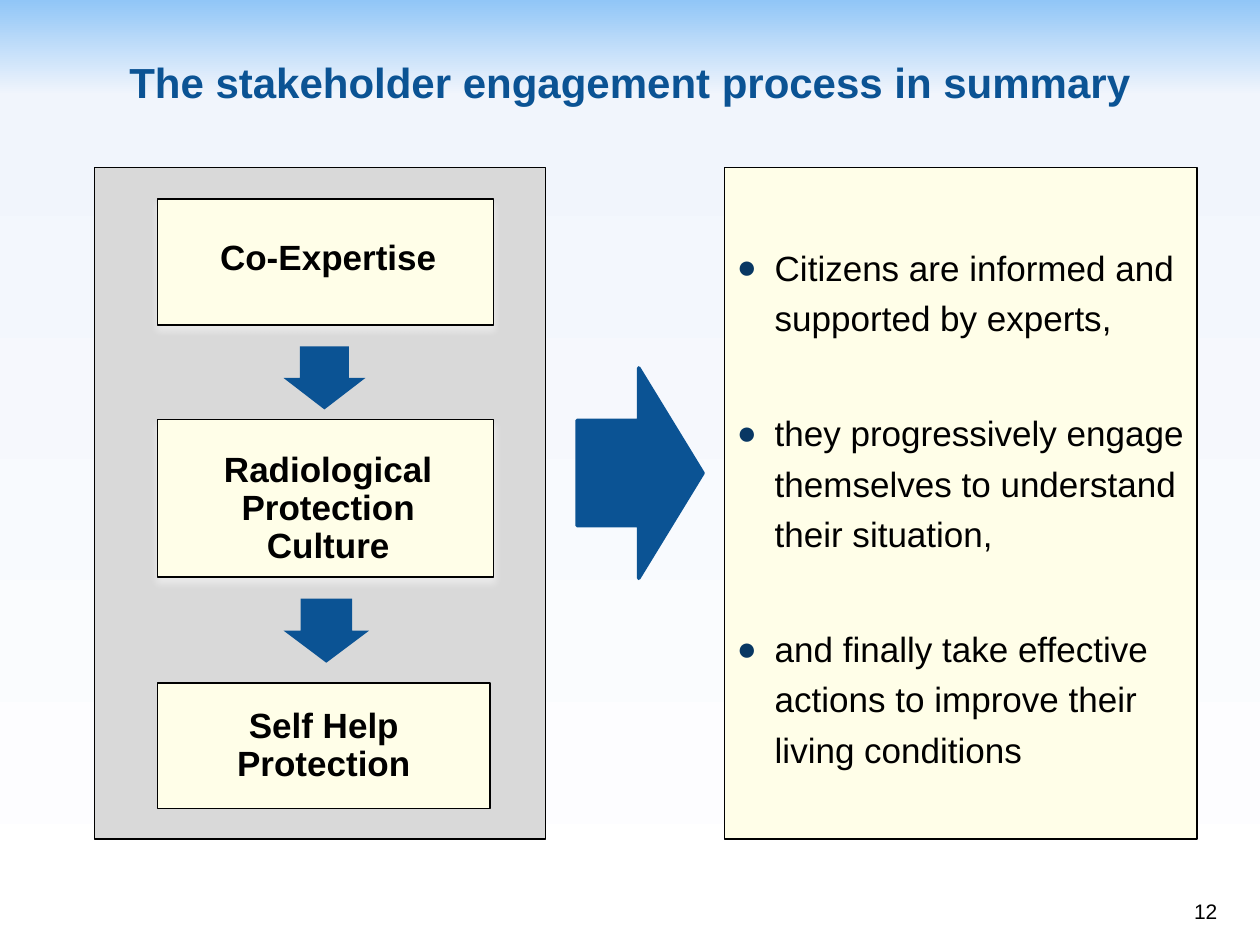
"""Build the slide that sums up the stakeholder engagement process."""
from dataclasses import dataclass

from lxml import etree
from pptx import Presentation
from pptx.dml.color import RGBColor
from pptx.enum.shapes import MSO_SHAPE
from pptx.enum.text import MSO_ANCHOR, PP_ALIGN
from pptx.oxml.ns import qn
from pptx.util import Inches, Pt

RECTANGLE = MSO_SHAPE.RECTANGLE
RIGHT_ARROW, DOWN_ARROW = MSO_SHAPE.RIGHT_ARROW, MSO_SHAPE.DOWN_ARROW
MIDDLE, BOTTOM = MSO_ANCHOR.MIDDLE, MSO_ANCHOR.BOTTOM
LEFT, CENTER, RIGHT = PP_ALIGN.LEFT, PP_ALIGN.CENTER, PP_ALIGN.RIGHT

BLUE, CREAM, GREY, BLACK = "0B5394", "FFFEE8", "D9D9D9", "000000"
BULLET_BLUE, GLOW = "083763", "FFFFFF"
BACKGROUND = [(0, "91C6F7"), (10, "F1F5FC"), (100, "FFFFFF")]


@dataclass
class Area:
    left: float
    top: float
    width: float
    height: float

    def lengths(self) -> list:
        return [Inches(v) for v in (self.left, self.top, self.width, self.height)]


@dataclass
class Step:
    label: str
    area: Area
    insets: tuple
    glow: bool


STEPS = [
    Step("Co-Expertise", Area(1.25, 1.58, 2.67, 1), (0.15, 0.11, 0.11, 0.15), True),
    Step("Radiological Protection Culture", Area(1.25, 3.33, 2.67, 1.25),
         (0.15, 0.28, 0.11, 0.11), True),
    Step("Self Help Protection", Area(1.25, 5.42, 2.64, 1), (0.11,) * 4, False),
]
DOWN_ARROWS = [Area(2.25, 2.75, 0.65, 0.5), Area(2.25, 4.75, 0.68, 0.51)]
OUTCOMES = [
    "Citizens are informed and supported by experts,",
    "they progressively engage themselves to understand their situation,",
    "and finally take effective actions to improve their living conditions",
]


def color(value: str) -> RGBColor:
    return RGBColor.from_string(value)


def add_xml(parent, tag: str, **attributes):
    return etree.SubElement(parent, qn(tag), attributes)


def set_values(target, values: dict) -> None:
    for name, value in values.items():
        setattr(target, name, value)


def paint_background(page) -> None:
    fill = page.background.fill
    fill.gradient()
    fill.gradient_angle = 270
    stops = page.element.find(".//" + qn("a:gsLst"))
    for stop in list(stops):
        stops.remove(stop)
    for position, value in BACKGROUND:
        stop = add_xml(stops, "a:gs", pos=str(position * 1000))
        add_xml(stop, "a:srgbClr", val=value)


def add_block(page, kind, area: Area, fill: str, line: str | None = None,
              line_width: float = 0.75, adjustments: tuple = ()):
    block = page.shapes.add_shape(kind, *area.lengths())
    block.shadow.inherit = False
    block.fill.solid()
    block.fill.fore_color.rgb = color(fill)
    if line:
        block.line.color.rgb = color(line)
        block.line.width = Pt(line_width)
    else:
        block.line.fill.background()
    for index, value in enumerate(adjustments):
        block.adjustments[index] = value
    return block


def add_glow(block) -> None:
    effects = block._element.spPr.find(qn("a:effectLst"))
    shadow = add_xml(effects, "a:outerShdw", blurRad=str(Pt(4.5)), dist=str(Pt(3)),
                     dir="5400000", rotWithShape="0")
    add_xml(add_xml(shadow, "a:srgbClr", val=GLOW), "a:alpha", val="48000")


def add_bullet(para) -> None:
    properties = para._p.get_or_add_pPr()
    properties.set("marL", str(Inches(0.3)))
    properties.set("indent", str(Inches(-0.3)))
    add_xml(add_xml(properties, "a:buClr"), "a:srgbClr", val=BULLET_BLUE)
    add_xml(properties, "a:buSzPct", val="95000")
    add_xml(properties, "a:buFont", typeface="Arial")
    add_xml(properties, "a:buChar", char="●")


def write(box, texts: list[str], size: float, ink: str = BLACK, bold: bool = False,
          align=CENTER, anchor=MIDDLE, insets: tuple = (0.1, 0.05, 0.1, 0.05),
          spacing: float = 1.0, gap: float = 0, bullets: bool = False) -> None:
    frame = box.text_frame
    sides = ("margin_left", "margin_top", "margin_right", "margin_bottom")
    set_values(frame, {"word_wrap": True, "vertical_anchor": anchor,
                       **{side: Inches(v) for side, v in zip(sides, insets)}})
    for index, text in enumerate(texts):
        para = frame.add_paragraph() if index else frame.paragraphs[0]
        if bullets:
            add_bullet(para)
        set_values(para, {"alignment": align, "line_spacing": spacing,
                          "space_before": Pt(gap if index else 0)})
        span = para.add_run()
        span.text = text
        set_values(span.font, {"name": "Arial", "size": Pt(size), "bold": bold})
        span.font.color.rgb = color(ink)


def main() -> None:
    deck = Presentation()
    deck.slide_width, deck.slide_height = Inches(10), Inches(7.5)
    page = deck.slides.add_slide(deck.slide_layouts[6])
    paint_background(page)

    title = page.shapes.add_textbox(*Area(0, 0.17, 10, 0.92).lengths())
    write(title, ["The stakeholder engagement process in summary"], 24, BLUE, True,
          insets=(0, 0.05, 0, 0.01))

    outcomes = add_block(page, RECTANGLE, Area(5.75, 1.33, 3.75, 5.33), CREAM, BLACK)
    write(outcomes, OUTCOMES, 20, align=LEFT, spacing=1.2, gap=37,
          insets=(0.1, 0.06, 0.08, 0.05), bullets=True)
    add_block(page, RIGHT_ARROW, Area(4.58, 2.92, 1, 1.67), BLUE, BLUE, 2, (0.5, 0.51))

    add_block(page, RECTANGLE, Area(0.75, 1.33, 3.58, 5.33), GREY, BLACK)
    for step in STEPS:
        box = add_block(page, RECTANGLE, step.area, CREAM, BLACK)
        if step.glow:
            add_glow(box)
        write(box, [step.label], 20, bold=True, insets=step.insets, spacing=0.9)
    for area in DOWN_ARROWS:
        add_block(page, DOWN_ARROW, area, BLUE, adjustments=(0.6, 0.5))

    number = page.shapes.add_textbox(*Area(7.68, 6.88, 2.08, 0.5).lengths())
    write(number, ["12"], 12, align=RIGHT, anchor=BOTTOM)
    deck.save("out.pptx")


if __name__ == "__main__":
    main()
